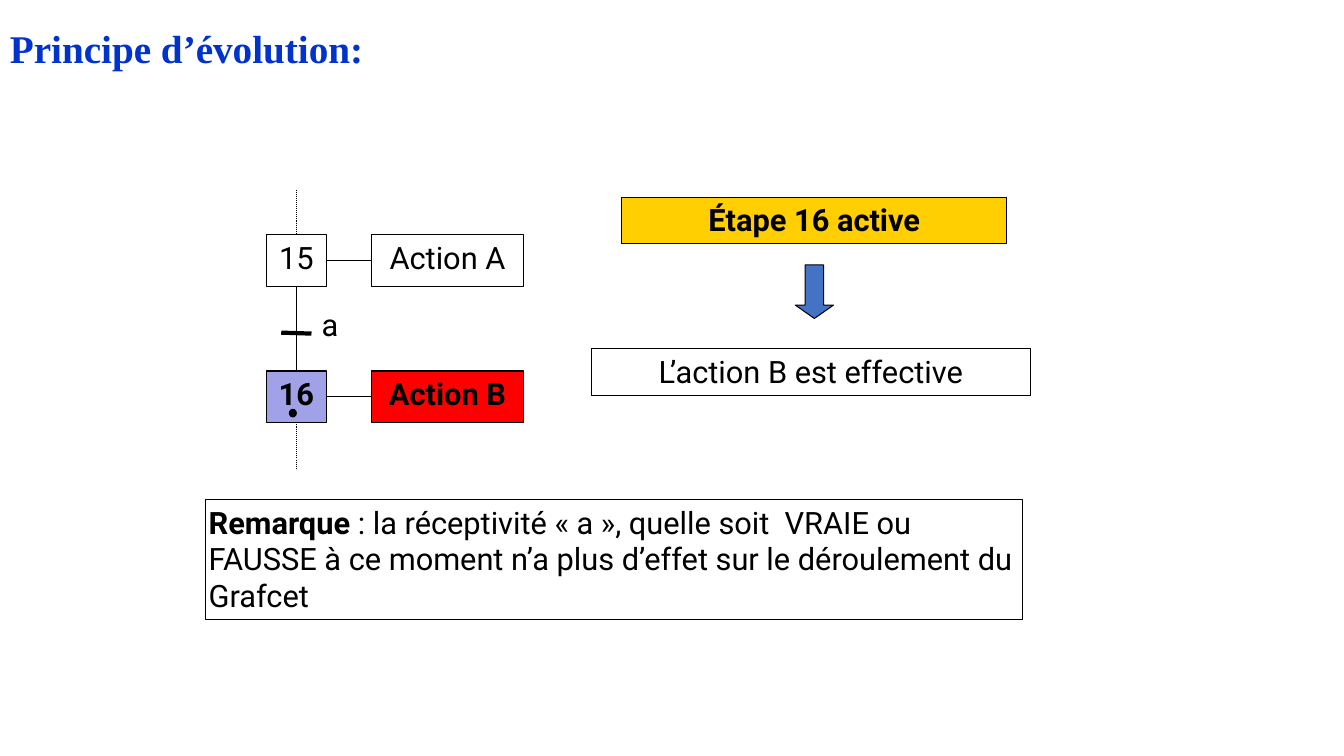
from lxml.etree import SubElement
from pptx import Presentation
from pptx.dml.color import RGBColor
from pptx.enum.dml import MSO_LINE as Dash
from pptx.enum.shapes import MSO_CONNECTOR as Link, MSO_SHAPE as Kind
from pptx.enum.text import MSO_ANCHOR as Anchor, PP_ALIGN as Align
from pptx.oxml.ns import qn
from pptx.util import Pt

BLACK = RGBColor(0, 0, 0)
BLUE = RGBColor(0x00, 0x33, 0xCC)
LILAC = RGBColor(0xA1, 0xA1, 0xE8)
RED = RGBColor(0xFF, 0, 0)
GOLD = RGBColor(0xFF, 0xCF, 0x01)
STEEL = RGBColor(0x44, 0x72, 0xC4)

BODY = {"name": "Roboto", "size": Pt(22), "bold": False}
HEAD = {"name": "Times New Roman", "size": Pt(28), "bold": True}
TOP, LEFT, BOTTOM, RIGHT = range(4)


def apply(item, values):
    for name, value in values.items():
        setattr(item, name, value)


def write(shape, runs, align=Align.LEFT, font=BODY, color=BLACK,
          lead=Pt(26.1), inset=(2.2, 2.9)):
    side, edge = map(Pt, inset)
    frame = shape.text_frame
    apply(frame, {"word_wrap": True, "vertical_anchor": Anchor.TOP,
                  "margin_left": side, "margin_right": side,
                  "margin_top": edge, "margin_bottom": edge})
    para = frame.paragraphs[0]
    apply(para, {"alignment": align, "line_spacing": lead})
    for text, bold in runs:
        run = para.add_run()
        run.text = text
        apply(run.font, {**font, "bold": bold})
        run.font.color.rgb = color


def draw(slide, kind, box, fill=None):
    shape = slide.shapes.add_shape(kind, *map(Pt, box))
    shape.shadow.inherit = False
    if fill is None:
        shape.fill.background()
    else:
        shape.fill.solid()
        shape.fill.fore_color.rgb = fill
    shape.line.color.rgb = BLACK
    shape.line.width = Pt(0.75)
    return shape


def panel(slide, box, text, fill=None, bold=False):
    shape = draw(slide, Kind.RECTANGLE, box, fill)
    write(shape, [(text, bold)], Align.CENTER)
    return shape


def label(slide, box, text, **style):
    write(slide.shapes.add_textbox(*map(Pt, box)), **style, runs=text)


def wire(slide, ends, start=None, stop=None, **style):
    line = slide.shapes.add_connector(Link.STRAIGHT, *map(Pt, ends))
    SubElement(line.element.spPr, qn("a:effectLst"))
    line.line.color.rgb = BLACK
    apply(line.line, {"width": Pt(0.75), **style})
    if start:
        line.begin_connect(*start)
    if stop:
        line.end_connect(*stop)


def step(slide, box, number, action, tint=None, glow=None):
    x, y, wide, high = box
    bold = tint is not None
    state = panel(slide, (x, y, 43.2, high), number, tint, bold)
    act = panel(slide, (x + wide - 108, y, 108, high), action, glow, bold)
    wire(slide, (0, 0, 0, 0), (state, RIGHT), (act, LEFT))
    return state


def chart(slide, box):
    x, y, wide, high = box
    tall, gap, mid = 36.7, 97.2, x + 21.6
    first = step(slide, (x, y + 32.4, wide, tall), "15", "Action A")
    last = step(slide, (x, y + 32.4 + gap, wide, tall), "16", "Action B",
                LILAC, RED)
    dots = {"dash_style": Dash.ROUND_DOT}
    wire(slide, (mid, y, mid, y + 32.4), stop=(first, TOP), **dots)
    wire(slide, (0, 0, 0, 0), (first, BOTTOM), (last, TOP))
    wire(slide, (mid, y, mid, y + high), start=(last, BOTTOM), **dots)
    wire(slide, (mid - 10.8, y + 102.2, mid + 10.8, y + 102.9), width=Pt(3))
    label(slide, (x + 39.6, y + 83.5, 27.4, 26), [("a", False)],
          inset=(0, 0))
    draw(slide, Kind.OVAL, (x + 16.6, y + 157, 5, 5.4), BLACK)


def result(slide, box):
    x, y, wide, high = box
    mid = x + wide / 2
    panel(slide, (x + 21.6, y, 275, 33.1), "Étape 16 active", GOLD, True)
    arrow = draw(slide, Kind.DOWN_ARROW, (mid + 0.6, y + 48.2, 27.4, 38.2),
                 STEEL)
    arrow.left = Pt(mid - 11.2)
    arrow.adjustments[0], arrow.adjustments[1] = 0.48, 0.35
    panel(slide, (x, y + high - 33.1, wide, 33.1), "L’action B est effective")


def remark(slide, box):
    write(draw(slide, Kind.RECTANGLE, box), [
        ("Remarque", True),
        (" : la réceptivité « a », quelle soit  VRAIE ou FAUSSE à ce moment "
         "n’a plus d’effet sur le déroulement du Grafcet", False)])


def main():
    deck = Presentation()
    apply(deck, {"slide_width": Pt(960), "slide_height": Pt(540)})
    slide = deck.slides.add_slide(deck.slide_layouts[6])
    chart(slide, (190.1, 135.4, 183.6, 200.2))
    result(slide, (422.6, 141.1, 313.2, 141.1))
    remark(slide, (146.9, 357.1, 583.2, 85.7))
    label(slide, (0, 13.7, 277.2, 41), [("Principe d’évolution:", True)],
          font=HEAD, color=BLUE, lead=1.0, inset=(7.2, 3.6))
    deck.save("out.pptx")


if __name__ == "__main__":
    main()
